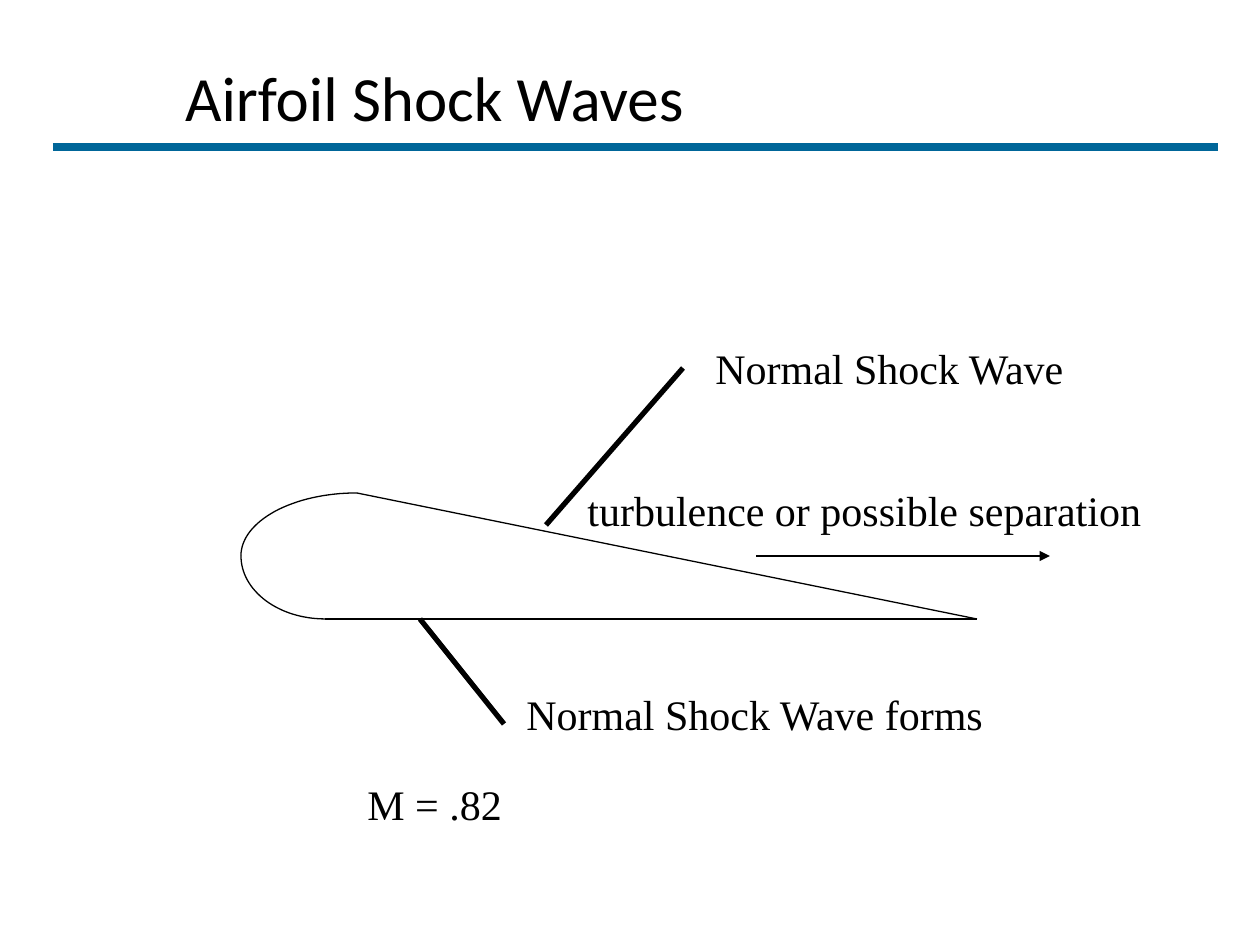
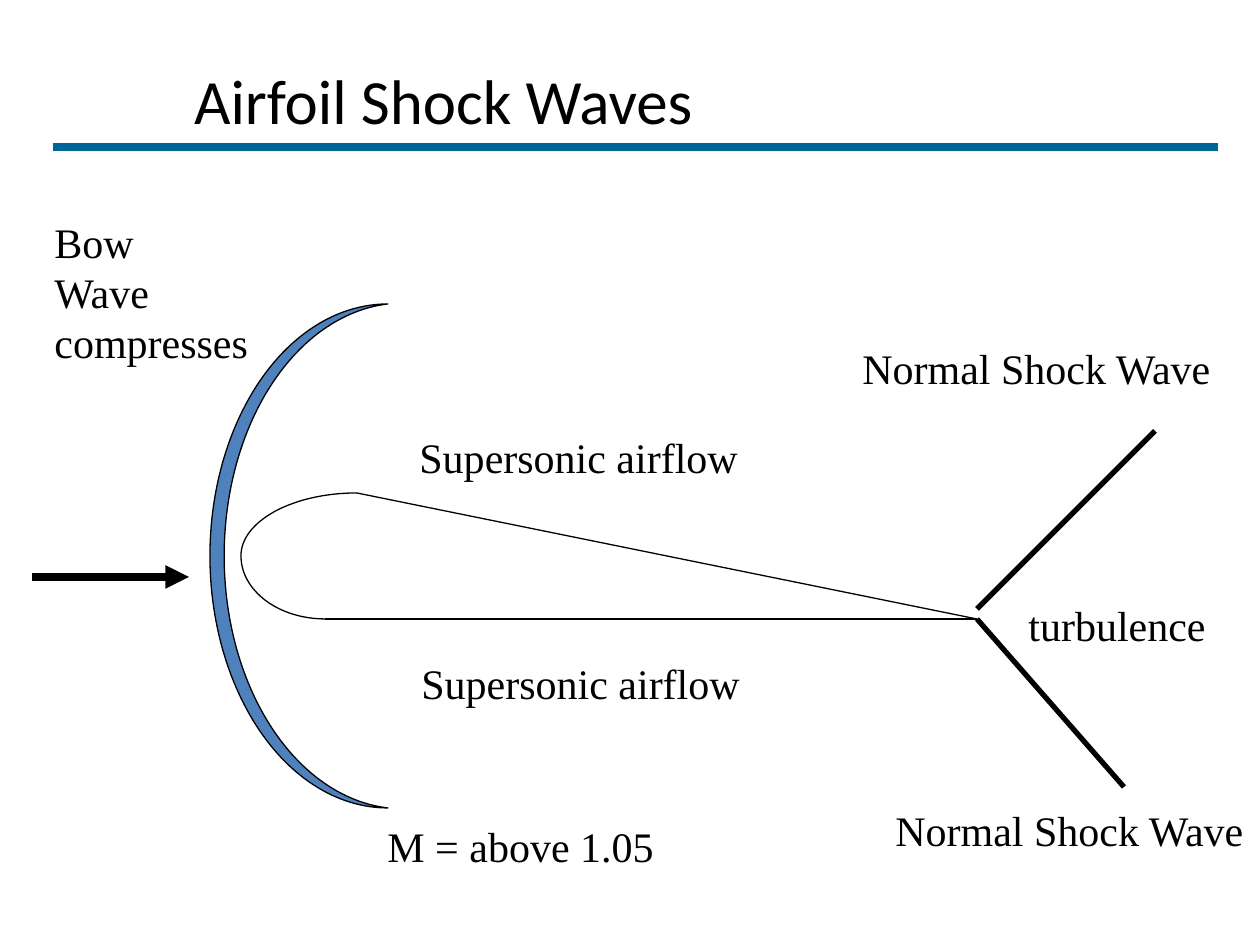
"""Build two slides on the shock waves around an airfoil."""
from math import cos, pi, sin

from lxml import etree
from pptx import Presentation
from pptx.dml.color import RGBColor
from pptx.enum.shapes import MSO_CONNECTOR, MSO_SHAPE
from pptx.enum.text import MSO_ANCHOR, MSO_AUTO_SIZE, PP_ALIGN
from pptx.oxml.ns import qn
from pptx.util import Pt

STRAIGHT = MSO_CONNECTOR.STRAIGHT
MOON = MSO_SHAPE.MOON
TOP = MSO_ANCHOR.TOP
FIT, FIXED = MSO_AUTO_SIZE.SHAPE_TO_FIT_TEXT, MSO_AUTO_SIZE.NONE
LEFT, CENTER = PP_ALIGN.LEFT, PP_ALIGN.CENTER

PX = 914400 / 126
STEPS = 32
COLORS = {"ink": "000000", "band": "006699", "bow": "4F81BD"}
INK, BAND, BOW = (RGBColor.from_string(c) for c in COLORS.values())


def write(shape, words, font="Times New Roman", size=24, align=LEFT, fit=FIT, wrap=False):
    frame = shape.text_frame
    frame.text = words
    frame.word_wrap = wrap
    frame.auto_size = fit
    frame.vertical_anchor = TOP
    for para in frame.paragraphs:
        para.alignment = align
        face = para.runs[0].font
        face.name, face.size = font, Pt(size)
        face.color.rgb = INK


def draw(slide, ends, width=0.75, color=INK, arrow=False):
    line = slide.shapes.add_connector(STRAIGHT, *(round(v * PX) for v in ends))
    line.line.width = Pt(width)
    line.line.color.rgb = color
    props = line._element.spPr
    if arrow:
        etree.SubElement(props.find(qn("a:ln")), qn("a:tailEnd"), type="triangle")
    etree.SubElement(props, qn("a:effectLst"))
    return line


TITLE = "Airfoil Shock Waves"
FOIL = [(325, 619, 977, 619), (357, 493, 977, 619)]
NOSE = [(357, 556, 116, -63), (325, 556, 84, 63)]
SLIDES = [
    {
        "title": (73, 52, 723, 158),
        "shocks": [(546, 525, 683, 368), (420, 619, 504, 724)],
        "flow": ((756, 556, 1050, 556), 0.75),
        "moon": None,
        "labels": [
            ("M = .82", 355, 772, 164, 63),
            ("Normal Shock Wave", 703, 336, 381, 63),
            ("turbulence or possible separation", 575, 478, 586, 63),
            ("Normal Shock Wave forms", 514, 682, 490, 63),
        ],
    },
    {
        "title": (63, 55, 761, 158),
        "shocks": [(977, 609, 1155, 431), (977, 619, 1124, 787)],
        "flow": ((32, 577, 189, 577), 4.5),
        "moon": (210, 304, 178, 504),
        "labels": [
            ("Normal Shock Wave", 850, 336, 381, 63),
            ("Normal Shock Wave", 883, 798, 377, 63),
            ("M = above 1.05", 375, 814, 299, 63),
            ("Supersonic airflow", 407, 425, 348, 63),
            ("Supersonic airflow", 409, 651, 348, 63),
            ("Bow\nWave\ncompresses", 42, 210, 219, 164),
            ("turbulence", 1016, 593, 207, 63),
        ],
    },
]

deck = Presentation()
deck.slide_width, deck.slide_height = round(1260 * PX), round(945 * PX)
layout = deck.slide_layouts[5]

for plan in SLIDES:
    slide = deck.slides.add_slide(layout)
    shapes = slide.shapes
    if plan is SLIDES[0]:
        band = draw(slide, (53, 147, 1218, 147), 5, BAND)
        layout.shapes._spTree.append(band._element)

    title = shapes.title
    title.left, title.top, title.width, title.height = (round(v * PX) for v in plan["title"])
    write(title, TITLE, font="Calibri", size=36, align=CENTER, fit=FIXED, wrap=True)

    for ends in FOIL:
        draw(slide, ends)
    for mid, base, wide, high in NOSE:
        turns = [pi / 2 * i / STEPS for i in range(STEPS + 1)]
        dots = [((mid - wide * sin(t)) * PX, (base + high * cos(t)) * PX) for t in turns]
        path = shapes.build_freeform(*dots[0])
        path.add_line_segments(dots[1:], close=False)
        curve = path.convert_to_shape()
        curve.fill.background()
        curve.line.color.rgb = INK
        curve.line.width = Pt(0.75)
        curve.shadow.inherit = False

    for ends in plan["shocks"]:
        draw(slide, ends, 3)
    if plan["moon"]:
        moon = shapes.add_shape(MOON, *(round(v * PX) for v in plan["moon"]))
        moon.adjustments[0] = 0.08
        moon.fill.solid()
        moon.fill.fore_color.rgb = BOW
        moon.line.color.rgb = INK
        moon.line.width = Pt(0.75)
        moon.shadow.inherit = False
    for words, *box in plan["labels"]:
        write(shapes.add_textbox(*(round(v * PX) for v in box)), words)
    ends, width = plan["flow"]
    draw(slide, ends, width, arrow=True)

deck.save("out.pptx")
